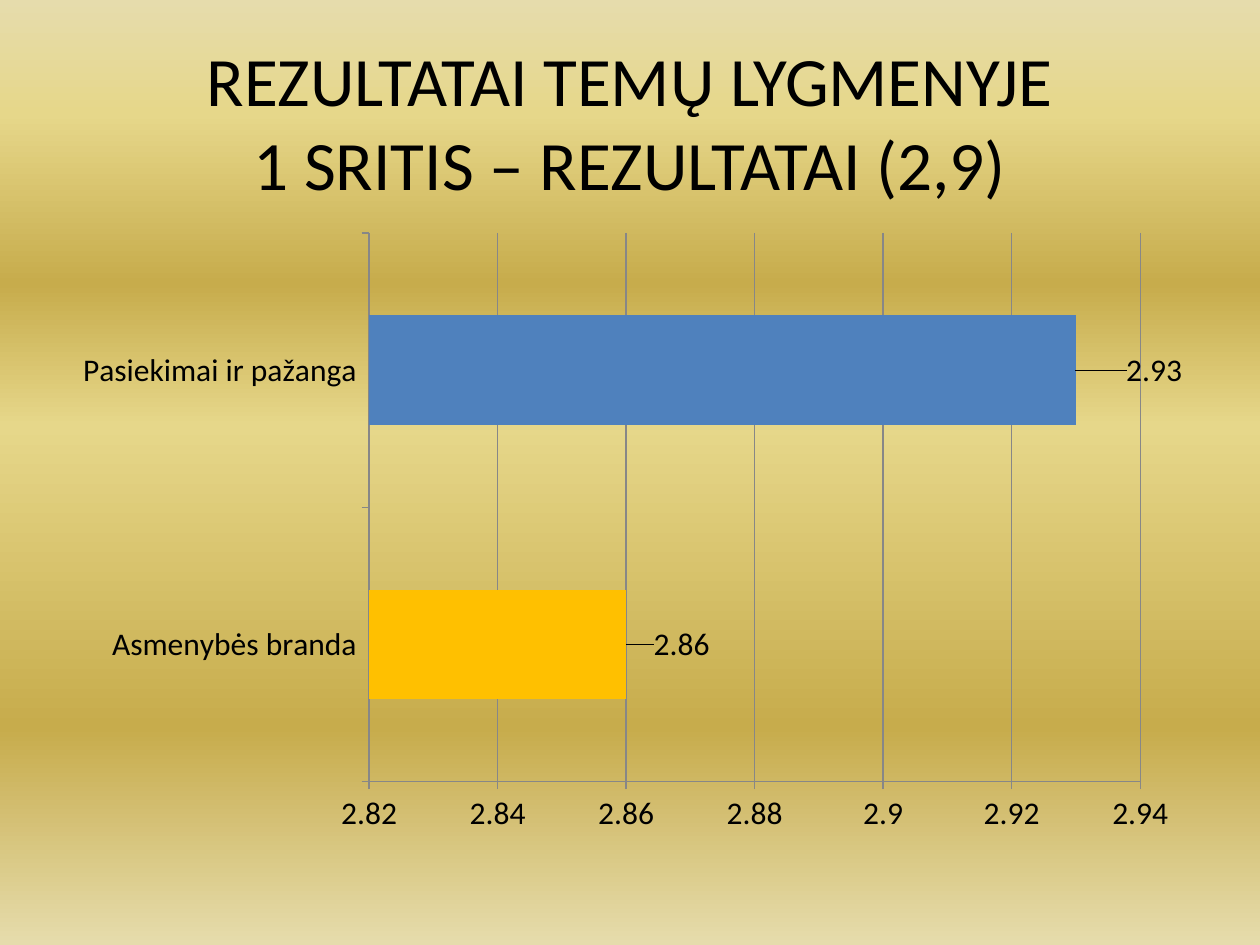
import pptx
import pptx.chart.data
import pptx.dml.color
import pptx.enum.chart
import pptx.enum.text
import pptx.oxml
import pptx.oxml.ns
import pptx.util
import lxml.etree

Pt = pptx.util.Pt
COLORS = {
    "text": "000000",
    "bar": "4F81BD",
    "highlight": "FFC000",
    "axis": "878787",
    "pale": "E6DCAC",
    "light": "E6D78A",
    "gold": "C7AC4C",
}
BACKGROUND_STOPS = [(0, "pale"), (12, "light"), (30, "gold"),
                    (45, "light"), (77, "gold"), (100, "pale")]


def rgb(name):
    return pptx.dml.color.RGBColor.from_string(COLORS[name])


def write_text(paragraph, text, font="Calibri", size=18, color="text",
               align=pptx.enum.text.PP_ALIGN.CENTER):
    paragraph.text = text
    paragraph.alignment = align
    for run in paragraph.runs:
        run.font.name = font
        run.font.size = Pt(size)
        run.font.color.rgb = rgb(color)


def manual_layout(inner=False, **fractions):
    layout = pptx.oxml.parse_xml(
        f'<c:layout {pptx.oxml.ns.nsdecls("c")}><c:manualLayout/></c:layout>')
    settings = {"layoutTarget": "inner", "xMode": "edge", "yMode": "edge"} if inner else {}
    for tag, value in {**settings, **fractions}.items():
        lxml.etree.SubElement(layout[0], pptx.oxml.ns.qn(f"c:{tag}"), val=str(value))
    return layout


class SlideBuilder:
    def __init__(self, slide, font="Calibri"):
        self.slide = slide
        self.font = font

    def background(self, stops, angle):
        fill = self.slide.background.fill
        fill.gradient()
        fill.gradient_angle = angle
        stop_list = self.slide.background._cSld.find(".//" + pptx.oxml.ns.qn("a:gsLst"))
        for stop in list(stop_list):
            stop_list.remove(stop)
        for position, color in stops:
            stop = lxml.etree.SubElement(stop_list, pptx.oxml.ns.qn("a:gs"),
                                         pos=str(position * 1000))
            lxml.etree.SubElement(stop, pptx.oxml.ns.qn("a:srgbClr"), val=COLORS[color])

    def title(self, text, left, top, width, height, size):
        shape = self.slide.shapes.add_textbox(Pt(left), Pt(top), Pt(width), Pt(height))
        frame = shape.text_frame
        frame.word_wrap = True
        frame.vertical_anchor = pptx.enum.text.MSO_ANCHOR.MIDDLE
        write_text(frame.paragraphs[0], text, font=self.font, size=size)

    def bar_chart(self, values, left, top, width, height, point_colors, label_shifts):
        data = pptx.chart.data.CategoryChartData()
        data.categories = list(values)
        data.add_series("Series 1", list(values.values()))
        chart = self.slide.shapes.add_chart(
            pptx.enum.chart.XL_CHART_TYPE.BAR_CLUSTERED,
            Pt(left), Pt(top), Pt(width), Pt(height), data).chart
        chart.has_legend = False
        chart.has_title = False
        chart.font.name = self.font
        chart.font.size = Pt(18)
        chart.font.color.rgb = rgb("text")
        for axis in (chart.category_axis, chart.value_axis):
            axis.major_tick_mark = pptx.enum.chart.XL_TICK_MARK.OUTSIDE
            axis.format.line.color.rgb = rgb("axis")
            axis.format.line.width = Pt(0.75)
        axis = chart.value_axis
        axis.minimum_scale, axis.maximum_scale, axis.major_unit = 2.82, 2.94, 0.02
        axis.has_major_gridlines = True
        axis.major_gridlines.format.line.color.rgb = rgb("axis")
        axis.major_gridlines.format.line.width = Pt(0.75)

        plot = chart.plots[0]
        plot.gap_width = 150
        plot.vary_by_categories = False
        series = plot.series[0]
        series.format.fill.solid()
        series.format.fill.fore_color.rgb = rgb("bar")
        series.data_labels.show_value = True
        for index, (color, shift) in enumerate(zip(point_colors, label_shifts)):
            point = series.points[index]
            point.format.fill.solid()
            point.format.fill.fore_color.rgb = rgb(color)
            point.data_label.position = pptx.enum.chart.XL_LABEL_POSITION.OUTSIDE_END
        labels = series._element.findall(".//" + pptx.oxml.ns.qn("c:dLbl"))
        for label, shift in zip(labels, label_shifts):
            label.insert(1, manual_layout(x=shift, y=0))
        plot_area = chart._chartSpace.find(".//" + pptx.oxml.ns.qn("c:plotArea"))
        for layout in plot_area.findall(pptx.oxml.ns.qn("c:layout")):
            plot_area.remove(layout)
        plot_area.insert(0, manual_layout(inner=True, x=0.27, y=0.02, w=0.68, h=0.88))


def main():
    presentation = pptx.Presentation()
    presentation.slide_width, presentation.slide_height = Pt(720), Pt(540)
    slide = presentation.slides.add_slide(presentation.slide_layouts[6])
    builder = SlideBuilder(slide)
    builder.background(BACKGROUND_STOPS, angle=270)
    builder.title("REZULTATAI TEMŲ LYGMENYJE\v1 SRITIS – REZULTATAI (2,9)",
                  36, 24, 648, 90, size=39.6)
    builder.bar_chart({"Asmenybės branda": 2.86, "Pasiekimai ir pažanga": 2.93},
                      36, 126, 648, 356.4,
                      point_colors=["highlight", "bar"], label_shifts=[0.02, 0.04])
    presentation.save("out.pptx")


if __name__ == "__main__":
    main()
